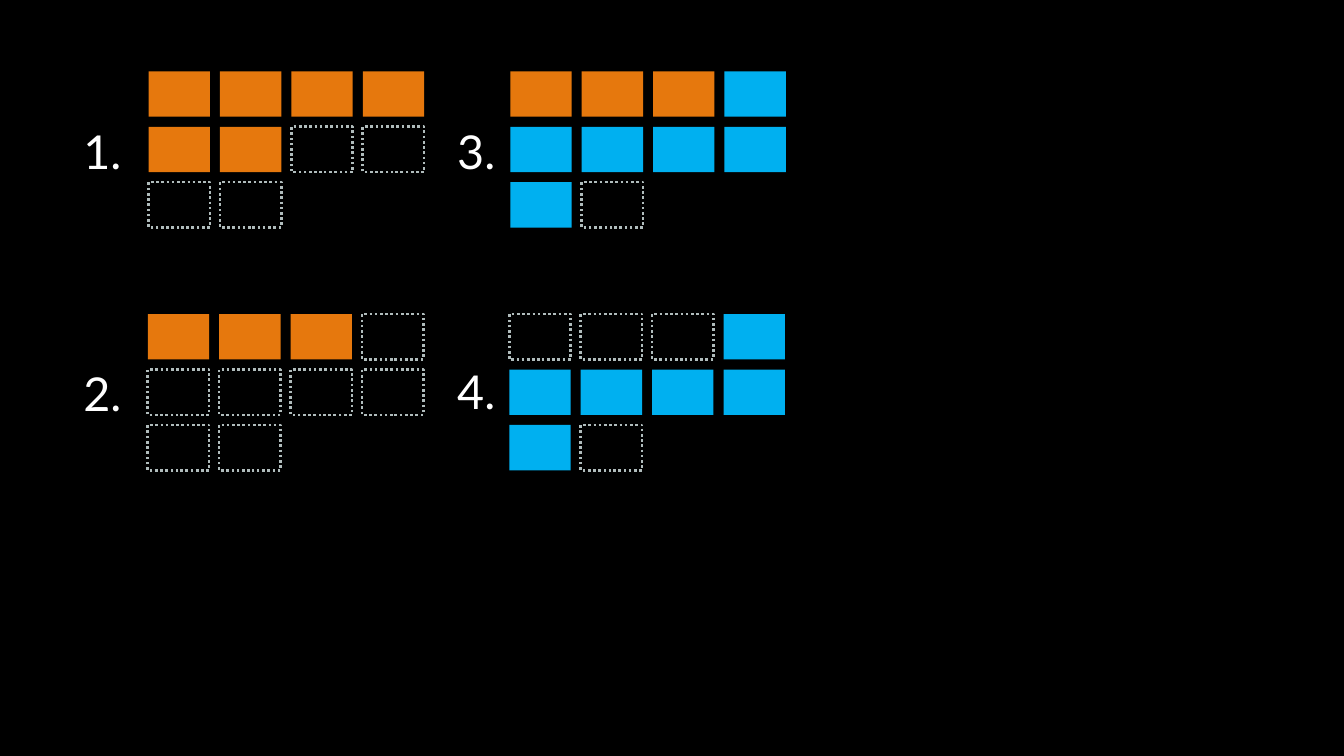
import pptx
import pptx.util
import pptx.dml.color
import pptx.enum.dml
import pptx.enum.shapes
import pptx.enum.text

Pt = pptx.util.Pt
RGB = pptx.dml.color.RGBColor
BLACK = RGB(0x00, 0x00, 0x00)
WHITE = RGB(0xFF, 0xFF, 0xFF)
ORANGE = RGB(0xE6, 0x78, 0x0D)
BLUE = RGB(0x00, 0xB0, 0xF0)
GREY = RGB(0xB0, 0xBC, 0xBC)

FILLS = {"O": ORANGE, "B": BLUE}
DOTS = {"width": Pt(2.25), "dash_style": pptx.enum.dml.MSO_LINE.ROUND_DOT}
FONT = {"name": "Lato", "size": Pt(40)}
FRAME = {"word_wrap": True, "auto_size": pptx.enum.text.MSO_AUTO_SIZE.SHAPE_TO_FIT_TEXT}

WIDE, HIGH = 52.6, 38.9
STEP_X, STEP_Y = 61.2, 47.5

GROUPS = [
    ("1.", 58.3, 101.5, 127.4, 61.2, ["OOOO", "OO..", ".."]),
    ("2.", 58.3, 309.6, 126.7, 269.3, ["OOO.", "....", ".."]),
    ("3.", 378.7, 101.5, 437.4, 61.2, ["OOOB", "BBBB", "B."]),
    ("4.", 378.7, 307.4, 436.6, 269.3, ["...B", "BBBB", "B."]),
]


def style(item, values):
    for key, value in values.items():
        setattr(item, key, value)


def add_box(slide, left, top, kind):
    box = slide.shapes.add_shape(
        pptx.enum.shapes.MSO_SHAPE.RECTANGLE, Pt(left), Pt(top), Pt(WIDE), Pt(HIGH))
    box.shadow.inherit = False
    if kind in FILLS:
        box.fill.solid()
        box.fill.fore_color.rgb = FILLS[kind]
        box.line.fill.background()
    else:
        box.fill.background()
        box.line.color.rgb = GREY
        style(box.line, DOTS)


def add_grid(slide, left, top, rows):
    for row, kinds in enumerate(rows):
        for col, kind in enumerate(kinds):
            add_box(slide, left + col * STEP_X, top + row * STEP_Y, kind)


def add_label(slide, left, top, text):
    frame = slide.shapes.add_textbox(Pt(left), Pt(top), Pt(59), Pt(55.4)).text_frame
    style(frame, FRAME)
    para = frame.paragraphs[0]
    para.alignment = pptx.enum.text.PP_ALIGN.CENTER
    run = para.add_run()
    run.text = text
    style(run.font, FONT)
    run.font.color.rgb = WHITE


def main():
    deck = pptx.Presentation()
    style(deck, {"slide_width": Pt(1152), "slide_height": Pt(648)})
    slide = deck.slides.add_slide(deck.slide_layouts[6])
    slide.background.fill.solid()
    slide.background.fill.fore_color.rgb = BLACK
    for text, text_x, text_y, left, top, rows in GROUPS:
        add_grid(slide, left, top, rows)
        add_label(slide, text_x, text_y, text)
    deck.save("out.pptx")


if __name__ == "__main__":
    main()
